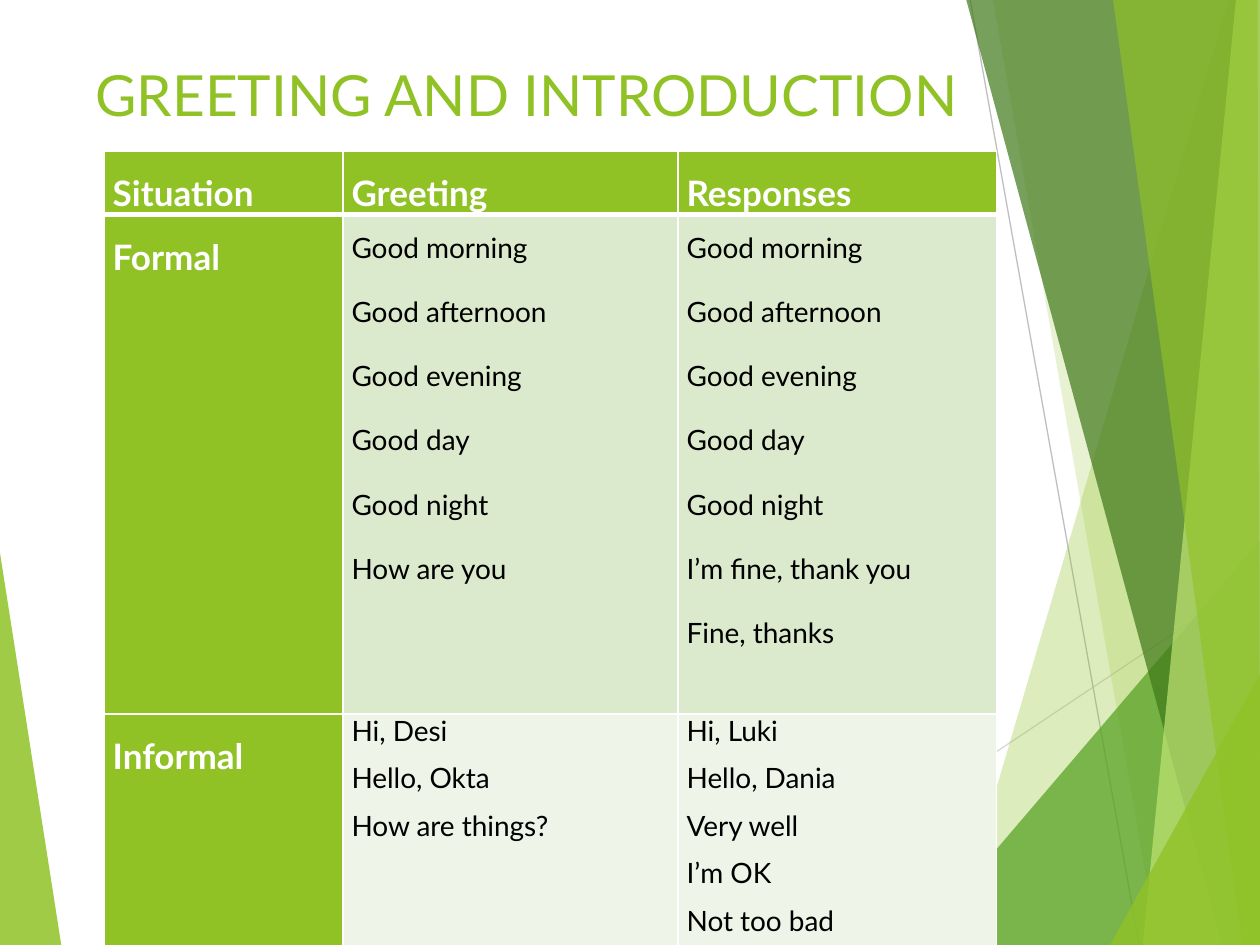
from lxml import etree
from pptx import Presentation
from pptx.dml.color import RGBColor
from pptx.enum.shapes import MSO_CONNECTOR
from pptx.enum.text import MSO_ANCHOR
from pptx.oxml.ns import qn
from pptx.util import Pt

STRAIGHT = MSO_CONNECTOR.STRAIGHT
MIDDLE = MSO_ANCHOR.MIDDLE
FONT = "Lato"
W, H = 720, 540
COLORS = {
    "lime": "90C226", "green": "54A021", "forest": "3F7819", "pale": "C0E474",
    "band_dark": "DBE9CD", "band_light": "EEF4E8", "white": "FFFFFF",
    "black": "000000", "gray": "BFBFBF", "light_gray": "D9D9D9",
}

LEFT_WEDGE = ("lime", 85, [(0, 316), (35, H), (0, H)])
LINES = [
    ("light_gray", 404, H, W, 329),
    ("gray", 554.4, 0, 651, H),
]
FACETS = [
    ("lime", 30, [(702, 0), (543, H), (W, H), (W, 0)]),
    ("lime", 20, [(567.4, 0), (661.7, H), (W, H), (W, 0)]),
    ("green", 72, [(522.7, H), (W, 309), (W, H)]),
    ("forest", 70, [(552.2, 0), (698.4, H), (W, H), (W, 0)]),
    ("pale", 70, [(706.3, 0), (653, H), (W, H), (W, 0)]),
    ("lime", 65, [(636, 0), (710, H), (W, H), (718.6, 0)]),
    ("lime", 80, [(634.3, H), (W, 385.2), (W, H)]),
]

HEADERS = ["Situation", "Greeting", "Responses"]
COMMON = ["Good morning", "Good afternoon", "Good evening", "Good day", "Good night"]
SITUATIONS = [
    ("Formal", "band_dark", 1.5,
     COMMON + ["How are you"],
     COMMON + ["I’m fine, thank you", "Fine, thanks"]),
    ("Informal", "band_light", 1,
     ["Hi, Desi", "Hello, Okta", "How are things?"],
     ["Hi, Luki", "Hello, Dania", "Very well", "I’m OK", "Not too bad"]),
]
COL_WIDTHS = [136.5, 191.5, 182]
ROW_HEIGHTS = [35.5, 285.5, 138.5]


def rgb(name):
    return RGBColor.from_string(COLORS[name])


def add_run(p, text, size, color, bold=False):
    r = p.add_run()
    r.text = text
    r.font.name = FONT
    r.font.size = Pt(size)
    r.font.bold = bold
    r.font.color.rgb = rgb(color)


def add_facet(slide, color, opacity, points):
    fb = slide.shapes.build_freeform(Pt(points[0][0]), Pt(points[0][1]))
    fb.add_line_segments([(Pt(x), Pt(y)) for x, y in points[1:]], close=True)
    s = fb.convert_to_shape()
    s.shadow.inherit = False
    s.line.fill.background()
    s.fill.solid()
    s.fill.fore_color.rgb = rgb(color)
    clr = s.element.spPr.find(qn("a:solidFill")).find(qn("a:srgbClr"))
    etree.SubElement(clr, qn("a:alpha"), val=str(opacity * 1000))


def add_line(slide, color, x1, y1, x2, y2):
    c = slide.shapes.add_connector(STRAIGHT, Pt(x1), Pt(y1), Pt(x2), Pt(y2))
    c.line.color.rgb = rgb(color)
    c.line.width = Pt(0.75)
    etree.SubElement(c.element.spPr, qn("a:effectLst"))


def add_title(slide, text):
    s = slide.shapes.add_textbox(Pt(47.5), Pt(29), Pt(522), Pt(49.5))
    tf = s.text_frame
    tf.word_wrap = True
    tf.vertical_anchor = MIDDLE
    add_run(tf.paragraphs[0], text, 32.4, "lime")


def set_borders(cell, bottom):
    tc_pr = cell._tc.get_or_add_tcPr()
    for side, width in (("L", 1), ("R", 1), ("T", 1), ("B", bottom)):
        ln = etree.SubElement(tc_pr, qn(f"a:ln{side}"), w=str(Pt(width)))
        fill = etree.SubElement(ln, qn("a:solidFill"))
        etree.SubElement(fill, qn("a:srgbClr"), val=COLORS["white"])


def fill_cell(cell, texts, fill, size, color, bold=False, spacing=1.5, bottom=1):
    set_borders(cell, bottom)
    cell.fill.solid()
    cell.fill.fore_color.rgb = rgb(fill)
    cell.margin_left = cell.margin_right = Pt(5)
    cell.margin_top = cell.margin_bottom = 0
    tf = cell.text_frame
    for i, text in enumerate(texts):
        p = tf.add_paragraph() if i else tf.paragraphs[0]
        p.line_spacing = float(spacing)
        p.space_after = Pt(8)
        add_run(p, text, size, color, bold)


def fill_heading(cell, text, bottom=1):
    fill_cell(cell, [text], "lime", 20, "white", bold=True, bottom=bottom)


def add_greeting_table(slide):
    frame = slide.shapes.add_table(
        len(ROW_HEIGHTS), len(COL_WIDTHS), Pt(59.4), Pt(86.4),
        Pt(sum(COL_WIDTHS)), Pt(sum(ROW_HEIGHTS)))
    table = frame.table
    for col, width in zip(table.columns, COL_WIDTHS):
        col.width = Pt(width)
    for row, height in zip(table.rows, ROW_HEIGHTS):
        row.height = Pt(height)
    for i, text in enumerate(HEADERS):
        fill_heading(table.cell(0, i), text, bottom=3)
    for i, (name, band, spacing, *columns) in enumerate(SITUATIONS, 1):
        fill_heading(table.cell(i, 0), name)
        for j, texts in enumerate(columns, 1):
            fill_cell(table.cell(i, j), texts, band, 16, "black", spacing=spacing)


def main():
    prs = Presentation()
    prs.slide_width, prs.slide_height = Pt(W), Pt(H)
    slide = prs.slides.add_slide(prs.slide_layouts[6])
    add_facet(slide, *LEFT_WEDGE)
    for line in LINES:
        add_line(slide, *line)
    for facet in FACETS:
        add_facet(slide, *facet)
    add_title(slide, "GREETING AND INTRODUCTION")
    add_greeting_table(slide)
    prs.save("out.pptx")


if __name__ == "__main__":
    main()
